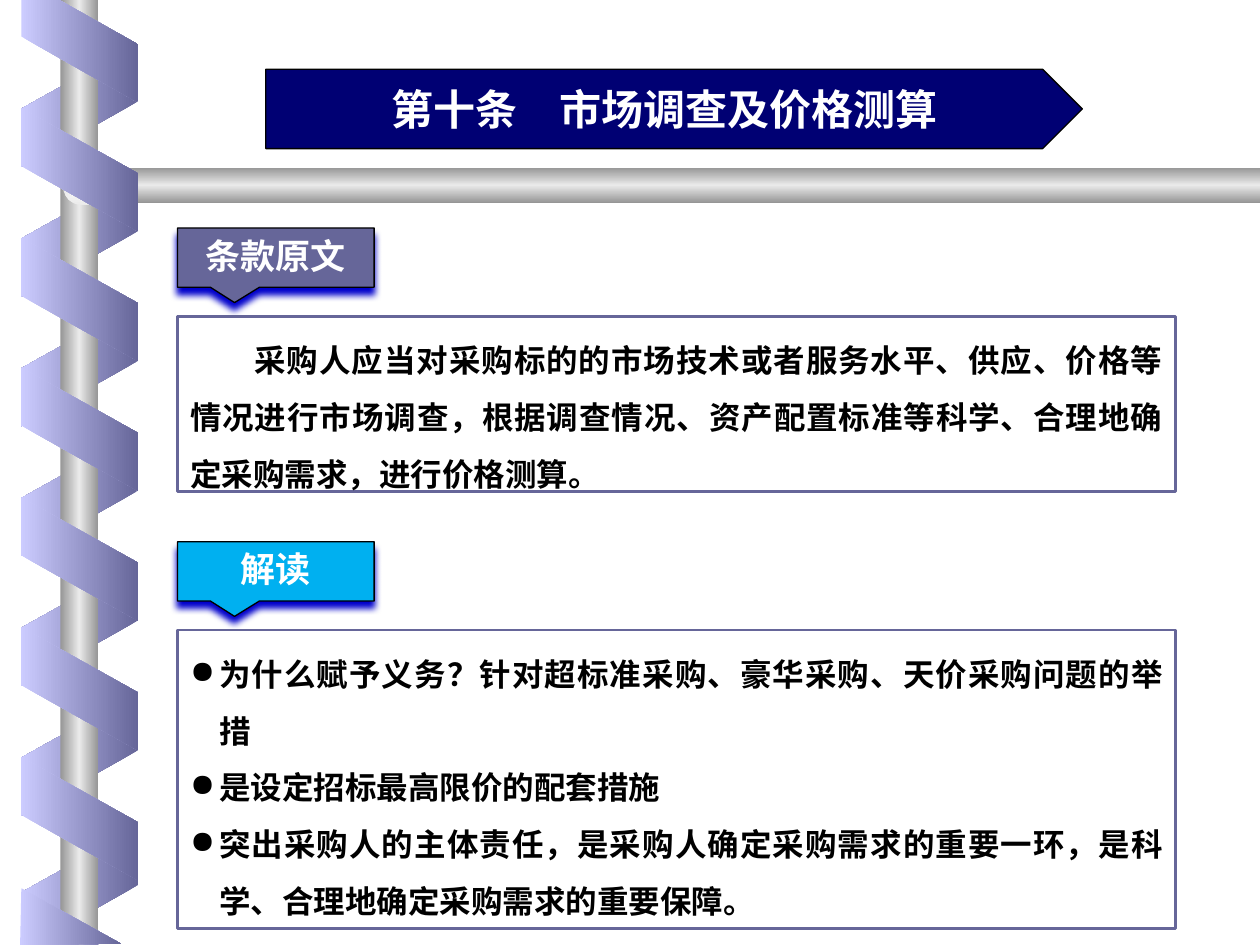
from pptx import Presentation
from pptx.dml.color import RGBColor as RGB
from pptx.enum.shapes import MSO_SHAPE as Kind
from pptx.enum.text import MSO_ANCHOR as Anchor, MSO_AUTO_SIZE as Auto, PP_ALIGN as Align
from pptx.oxml import parse_xml
from pptx.oxml.ns import qn
from pptx.util import Inches, Pt

TITLE = "第十条　市场调查及价格测算"
PARTS = [
    dict(top=1.81, tag="条款原文", tint="slate", high=1.39, mark=False, lines=[
        "采购人应当对采购标的的市场技术或者服务水平、供应、价格等情况进行市场调查，"
        "根据调查情况、资产配置标准等科学、合理地确定采购需求，进行价格测算。"]),
    dict(top=4.3, tag="解读", tint="sky", high=2.37, mark=True, lines=[
        "为什么赋予义务？针对超标准采购、豪华采购、天价采购问题的举措",
        "是设定招标最高限价的配套措施",
        "突出采购人的主体责任，是采购人确定采购需求的重要一环，"
        "是科学、合理地确定采购需求的重要保障。"]),
]
THEME = dict(
    slate="666699", lilac="CCCCFF", grey="969696", pale="EAEAEA", pearl="FEFFFF",
    navy="000073", sky="00B0F0", glow="0000CC", ink="000000", white="FFFFFF",
    head=24, tag=20, body=18, serif="Times New Roman", sans="Noto Sans CJK SC")
STEP = 1.03
BACK = [0.37 + STEP * i for i in range(6)] + [6.59]
FRONT = [0.88 + STEP * i for i in range(6)]
TOP_END = [(0.17, 0), (0.17, 0.29), (1.09, 0.81), (1.09, 0.35), (0.47, 0)]
LOW_END = [(0.96, 7.49), (0.17, 7.05), (0.16, 7.5)]
NS = 'xmlns:a="http://schemas.openxmlformats.org/drawingml/2006/main"'

deck = Presentation()
deck.slide_width, deck.slide_height = Inches(10), Inches(7.5)
shapes = deck.slides.add_slide(deck.slide_layouts[6]).shapes


def tone(name):
    return RGB.from_string(THEME[name])


def blend(shape, names, angle=0, radial=False):
    last = len(names) - 1
    stops = "".join(
        f'<a:gs pos="{100000 * i // last}"><a:srgbClr val="{THEME[n]}"/></a:gs>'
        for i, n in enumerate(names))
    way = f'<a:lin ang="{angle * 60000}" scaled="0"/>'
    if radial:
        way = ('<a:path path="shape"><a:fillToRect l="50000" t="50000" '
               'r="50000" b="50000"/></a:path>')
    shape.fill.background()
    old = shape.element.spPr.find(qn("a:noFill"))
    old.getparent().replace(old, parse_xml(
        f'<a:gradFill {NS} rotWithShape="0"><a:gsLst>{stops}</a:gsLst>{way}</a:gradFill>'))


def put(kind, left, top, wide, high, fill=None, line=None, width=0.75, adj=()):
    shape = shapes.add_shape(kind, *map(Inches, (left, top, wide, high)))
    shape.shadow.inherit = False
    for i, value in enumerate(adj):
        shape.adjustments[i] = value
    if fill:
        shape.fill.solid()
        shape.fill.fore_color.rgb = tone(fill)
    else:
        shape.fill.background()
    if line:
        shape.line.color.rgb = tone(line)
        shape.line.width = Pt(width)
    else:
        shape.line.fill.background()
    return shape


def flip(shape):
    shape.element.spPr.get_or_add_xfrm().set("flipH", "1")


def write(shape, lines, size, face, color, align, anchor=Anchor.TOP):
    frame = shape.text_frame
    frame.word_wrap = True
    frame.vertical_anchor = anchor
    frame.text = "\n".join(lines)
    for para in frame.paragraphs:
        para.alignment = align
        font = para.font
        font.size, font.name, font.bold = Pt(THEME[size]), THEME[face], True
        font.color.rgb = tone(color)
    return frame


def strip(top, turn, names):
    shape = put(Kind.PARALLELOGRAM, 0.14, top, 0.98, 0.93, adj=[0.56])
    shape.rotation = turn
    blend(shape, names)
    return shape


def trace(points):
    spots = [(Inches(x), Inches(y)) for x, y in points]
    pen = shapes.build_freeform(*spots[0])
    pen.add_line_segments(spots[1:], close=True)
    shape = pen.convert_to_shape()
    shape.shadow.inherit = False
    shape.line.fill.background()
    blend(shape, ["lilac", "slate"])


def glow(shape):
    shape.element.spPr.find(qn("a:effectLst")).append(parse_xml(
        f'<a:outerShdw {NS} blurRad="{Pt(4)}" dist="{Pt(4)}" dir="5400000" algn="ctr" '
        f'rotWithShape="0"><a:srgbClr val="{THEME["glow"]}"/></a:outerShdw>'))


def indent(para, mark):
    props = para._p.get_or_add_pPr()
    para.line_spacing = 1.5
    props.set("marL", str(Inches(0.23 if mark else 0)))
    props.set("indent", str(Inches(-0.23 if mark else 0.51)))
    if mark:
        props.find(qn("a:defRPr")).addprevious(parse_xml(f'<a:buChar {NS} char="●"/>'))


def spiral():
    metal = ["grey", "pale", "grey"]
    for top in BACK:
        flip(strip(top, 90, ["slate", "lilac"]))
    blend(put(Kind.RECTANGLE, 0.48, 0, 0.3, 7.5), metal)
    bar = put(Kind.PENTAGON, 0.6, 1.33, 9.4, 0.28, adj=[0.59])
    flip(bar)
    blend(bar, metal, 90)
    blend(put(Kind.OVAL, 0.5, 1.33, 0.32, 0.3), ["pearl", "pale"], radial=True)
    for top in FRONT:
        strip(top, 270, ["lilac", "slate"])
    trace(TOP_END)
    trace(LOW_END)


def section(part):
    tag = put(Kind.RECTANGULAR_CALLOUT, 1.41, part["top"], 1.56, 0.47,
              part["tint"], "ink", adj=[-0.21, 0.76])
    glow(tag)
    write(tag, [part["tag"]], "tag", "serif", "white", Align.CENTER)
    box = put(Kind.RECTANGLE, 1.41, part["top"] + 0.7, 7.92, part["high"],
              line="slate", width=1.5)
    frame = write(box, part["lines"], "body", "sans", "ink", Align.JUSTIFY)
    frame.auto_size = Auto.SHAPE_TO_FIT_TEXT
    for para in frame.paragraphs:
        indent(para, part["mark"])


spiral()
banner = put(Kind.PENTAGON, 2.11, 0.55, 6.48, 0.63, "navy", "ink")
write(banner, [TITLE], "head", "serif", "white", Align.CENTER, Anchor.MIDDLE)
for part in PARTS:
    section(part)
deck.save("out.pptx")
